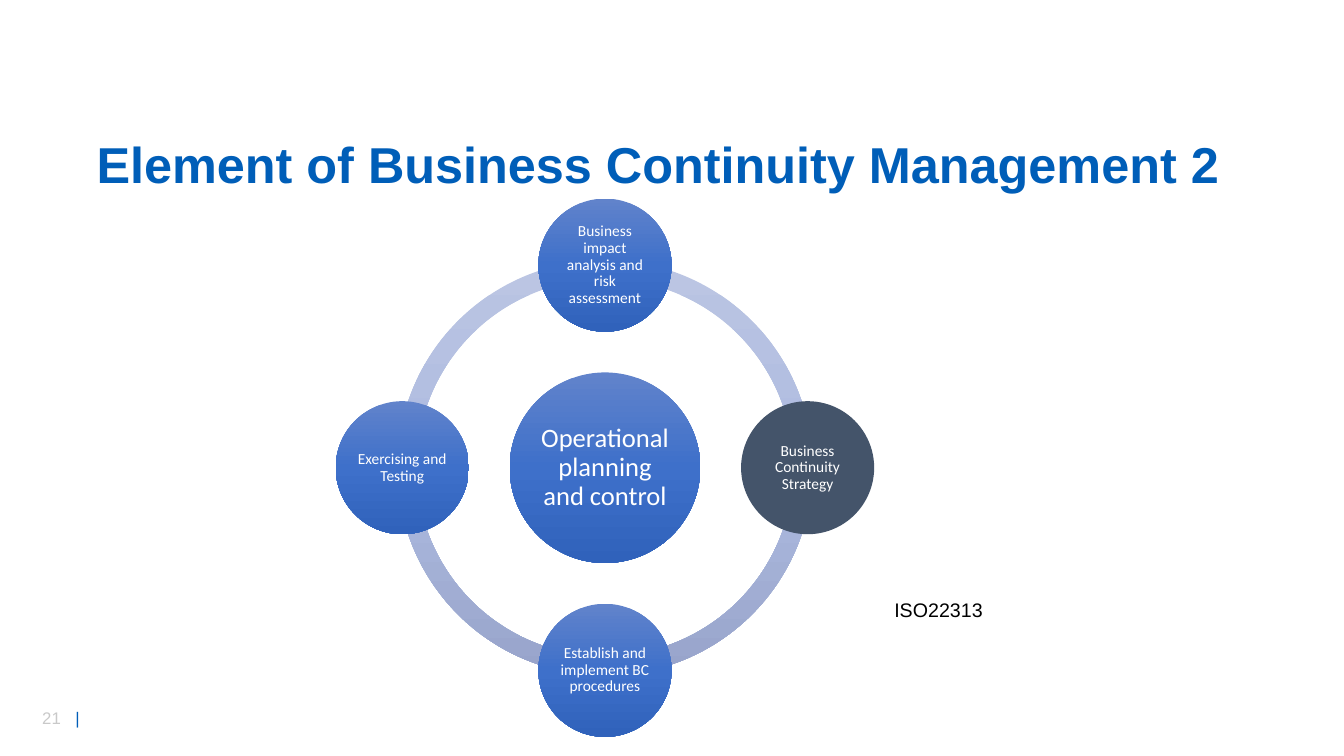
"""Build the business continuity management cycle slide."""
import copy
import math
from lxml import etree
from pptx import Presentation, util as u
from pptx.dml.color import RGBColor
from pptx.enum import shapes, text
from pptx.oxml.ns import qn

BLUE = RGBColor(0x00, 0x5E, 0xB8)
GREY = RGBColor(0xC9, 0xC9, 0xC9)
SLATE = RGBColor(0x44, 0x54, 0x6A)
WHITE = RGBColor(0xFF, 0xFF, 0xFF)
BLACK = RGBColor(0x00, 0x00, 0x00)
RING = [RGBColor(0xBB, 0xC5, 0xE3), RGBColor(0xAE, 0xBB, 0xE0), RGBColor(0x98, 0xA4, 0xCB)]
DISC = [RGBColor(0x61, 0x83, 0xCB), RGBColor(0x3E, 0x70, 0xCA), RGBColor(0x30, 0x62, 0xBB)]

TITLE = "Element of Business Continuity Management 2"
HUB = "Operational planning and control"
STEPS = [
    ("Business impact analysis and risk assessment", DISC),
    ("Business Continuity Strategy", SLATE),
    ("Establish and implement BC procedures", DISC),
    ("Exercising and Testing", DISC),
]
CENTER = (6.0, 4.64)
ORBIT, RING_SIZE, HUB_SIZE, STEP_SIZE = 2.01, 4.12, 1.89, 1.32
ARCS = [(108, 162), (54, 108), (0, 54), (162, 0)]
RING_WIDTH = 0.046


def set_fill(sp, color):
    if isinstance(color, RGBColor):
        sp.fill.solid()
        sp.fill.fore_color.rgb = color
        return
    sp.fill.gradient()
    sp.fill.gradient_angle = 270
    stops = sp._element.spPr.find(".//" + qn("a:gsLst"))
    stops.insert(1, copy.deepcopy(stops[0]))
    for stop, rgb, pos in zip(sp.fill.gradient_stops, color, (0, 0.5, 1)):
        stop.color.rgb = rgb
        stop.position = pos


def add_round(s, kind, cx, cy, size, color):
    sp = s.shapes.add_shape(kind, u.Inches(cx - size / 2), u.Inches(cy - size / 2),
                            u.Inches(size), u.Inches(size))
    sp.shadow.inherit = False
    sp.line.fill.background()
    set_fill(sp, color)
    return sp


def set_frame(tf, inset, anchor=text.MSO_ANCHOR.TOP):
    tf.word_wrap = True
    tf.vertical_anchor = anchor
    for side in ("left", "top", "right", "bottom"):
        setattr(tf, "margin_" + side, u.Inches(inset))


def add_run(p, words, size, color, name="Arial", bold=False):
    r = p.add_run()
    r.text = words
    r.font.color.rgb = color
    for key, value in {"name": name, "size": u.Pt(size), "bold": bold}.items():
        setattr(r.font, key, value)


def add_disc(s, words, cx, cy, size, color, inset, points):
    sp = add_round(s, shapes.MSO_SHAPE.OVAL, cx, cy, size, color)
    set_frame(sp.text_frame, inset, text.MSO_ANCHOR.MIDDLE)
    p = sp.text_frame.paragraphs[0]
    p.alignment = text.PP_ALIGN.CENTER
    p.line_spacing = 0.9
    add_run(p, words, points, WHITE, "Calibri")


def add_box(s, left, top, width, height):
    return s.shapes.add_textbox(*map(u.Inches, (left, top, width, height))).text_frame


def main():
    prs = Presentation()
    prs.slide_width, prs.slide_height = u.Inches(13.33), u.Inches(7.5)
    s = prs.slides.add_slide(prs.slide_layouts[6])

    tf = add_box(s, 0.32, 6.97, 0.71, 0.3)
    tf.word_wrap = True
    p = tf.paragraphs[0]
    tabs = etree.SubElement(p._p.get_or_add_pPr(), qn("a:tabLst"))
    etree.SubElement(tabs, qn("a:tab"), pos=str(u.Inches(0.33)), algn="l")
    add_run(p, "21\t", 12, GREY)
    add_run(p, "|", 12, BLUE)

    tf = add_box(s, 0.86, 1.32, 11.64, 0.67)
    tf.word_wrap = True
    tf.vertical_anchor = text.MSO_ANCHOR.MIDDLE
    p = tf.paragraphs[0]
    p.line_spacing = 0.9
    add_run(p, TITLE, 36, BLUE, bold=True)

    cx, cy = CENTER
    for start, end in ARCS:
        sp = add_round(s, shapes.MSO_SHAPE.BLOCK_ARC, cx, cy, RING_SIZE, RING)
        for i, value in enumerate((start, end, RING_WIDTH)):
            sp.adjustments[i] = value

    add_disc(s, HUB, cx, cy, HUB_SIZE, DISC, 0.03, 19)
    for i, (words, color) in enumerate(STEPS):
        angle = math.tau * i / len(STEPS)
        add_disc(s, words, cx + ORBIT * math.sin(angle), cy - ORBIT * math.cos(angle),
                 STEP_SIZE, color, 0.02, 11)

    tf = add_box(s, 8.87, 5.93, 1.5, 0.24)
    set_frame(tf, 0)
    add_run(tf.paragraphs[0], "ISO22313", 14, BLACK)

    prs.save("out.pptx")


if __name__ == "__main__":
    main()
